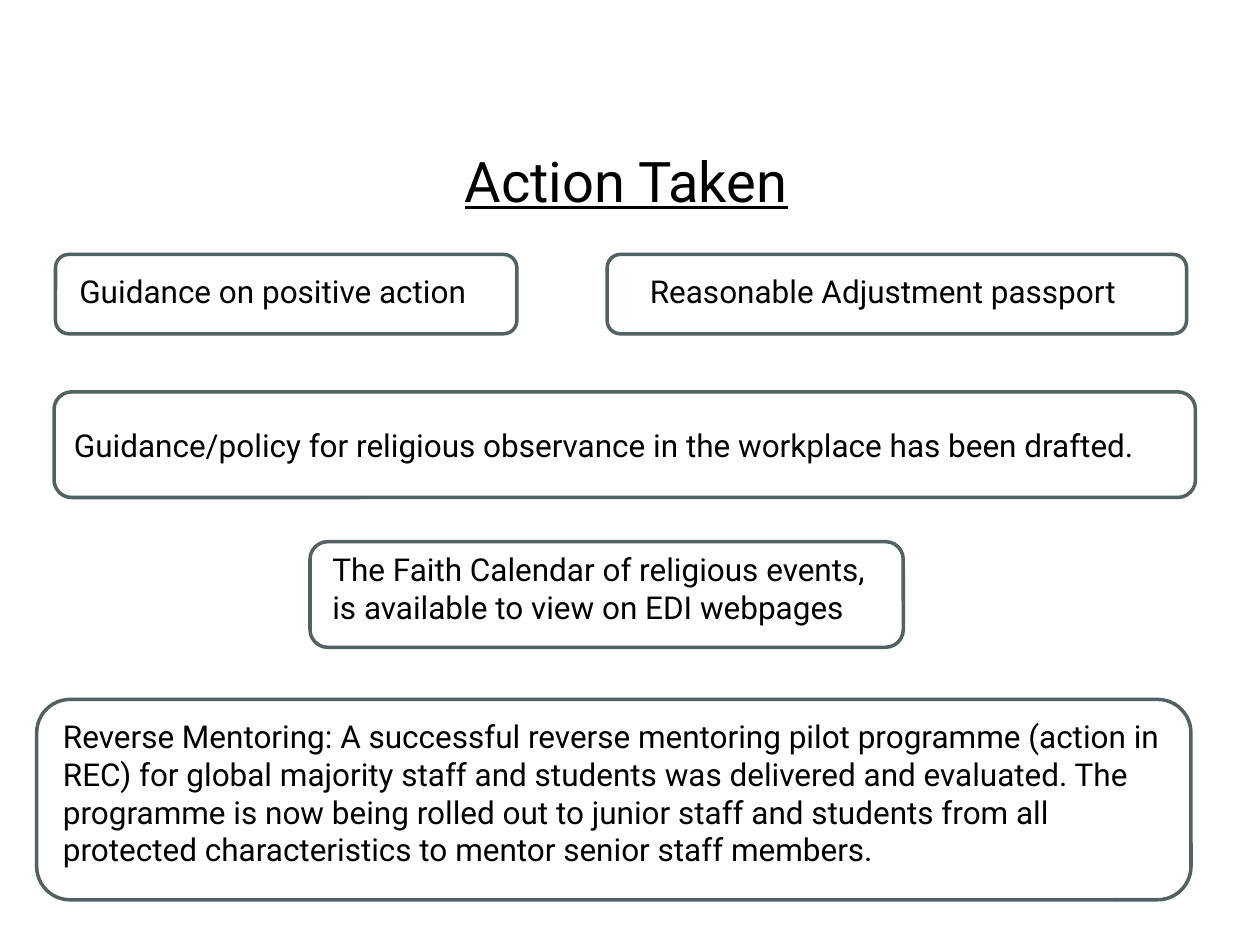
"""Build the Action Taken slide: a title above five outlined notes."""
from pptx import Presentation
from pptx.dml.color import RGBColor
from pptx.enum.shapes import MSO_SHAPE
from pptx.enum.text import MSO_AUTO_SIZE, PP_ALIGN
from pptx.util import Cm, Pt

BLACK = RGBColor(0x00, 0x00, 0x00)
SLATE = RGBColor(0x52, 0x62, 0x63)
BODY = {"name": "Roboto", "size": Pt(18)}
TITLE = {"name": "Roboto", "size": Pt(32), "underline": True}


def write(slide, area, words, style, align=PP_ALIGN.LEFT):
    box = slide.shapes.add_textbox(*map(Cm, area))
    frame = box.text_frame
    frame.word_wrap = True
    frame.auto_size = MSO_AUTO_SIZE.SHAPE_TO_FIT_TEXT
    para = frame.paragraphs[0]
    para.alignment = align
    run = para.add_run()
    run.text = words
    for key, value in style.items():
        setattr(run.font, key, value)
    run.font.color.rgb = BLACK


deck = Presentation()
deck.slide_width, deck.slide_height = Cm(25.4), Cm(19.05)
slide = deck.slides.add_slide(deck.slide_layouts[6])

notes = [
    ((1.12, 5.13, 9.3, 1.6), (1.35, 5.36, 9.19, 1.02),
     "Guidance on positive action"),
    ((12.24, 5.13, 11.68, 1.6), (12.85, 5.36, 10.39, 1.02),
     "Reasonable Adjustment passport"),
    ((1.09, 7.9, 23.01, 2.13), (1.24, 8.46, 22.76, 1.02),
     "Guidance/policy for religious observance in the workplace "
     "has been drafted."),
    ((6.25, 10.92, 11.96, 2.13), (6.45, 10.97, 11.76, 1.8),
     "The Faith Calendar of religious events, is available to view "
     "on EDI webpages"),
    ((0.74, 14.1, 23.27, 4.04), (1.02, 14.33, 23.01, 3.33),
     "Reverse Mentoring: A successful reverse mentoring pilot programme "
     "(action in REC) for global majority staff and students was delivered "
     "and evaluated. The programme is now being rolled out to junior staff "
     "and students from all protected characteristics to mentor senior "
     "staff members."),
]
for edge, area, words in notes:
    card = slide.shapes.add_shape(MSO_SHAPE.ROUNDED_RECTANGLE, *map(Cm, edge))
    card.shadow.inherit = False
    card.fill.background()
    card.line.color.rgb = SLATE
    card.line.width = Pt(2)
    write(slide, area, words, BODY)

write(slide, (8.03, 2.82, 9.19, 1.63), "Action Taken", TITLE, PP_ALIGN.CENTER)

deck.save("out.pptx")
